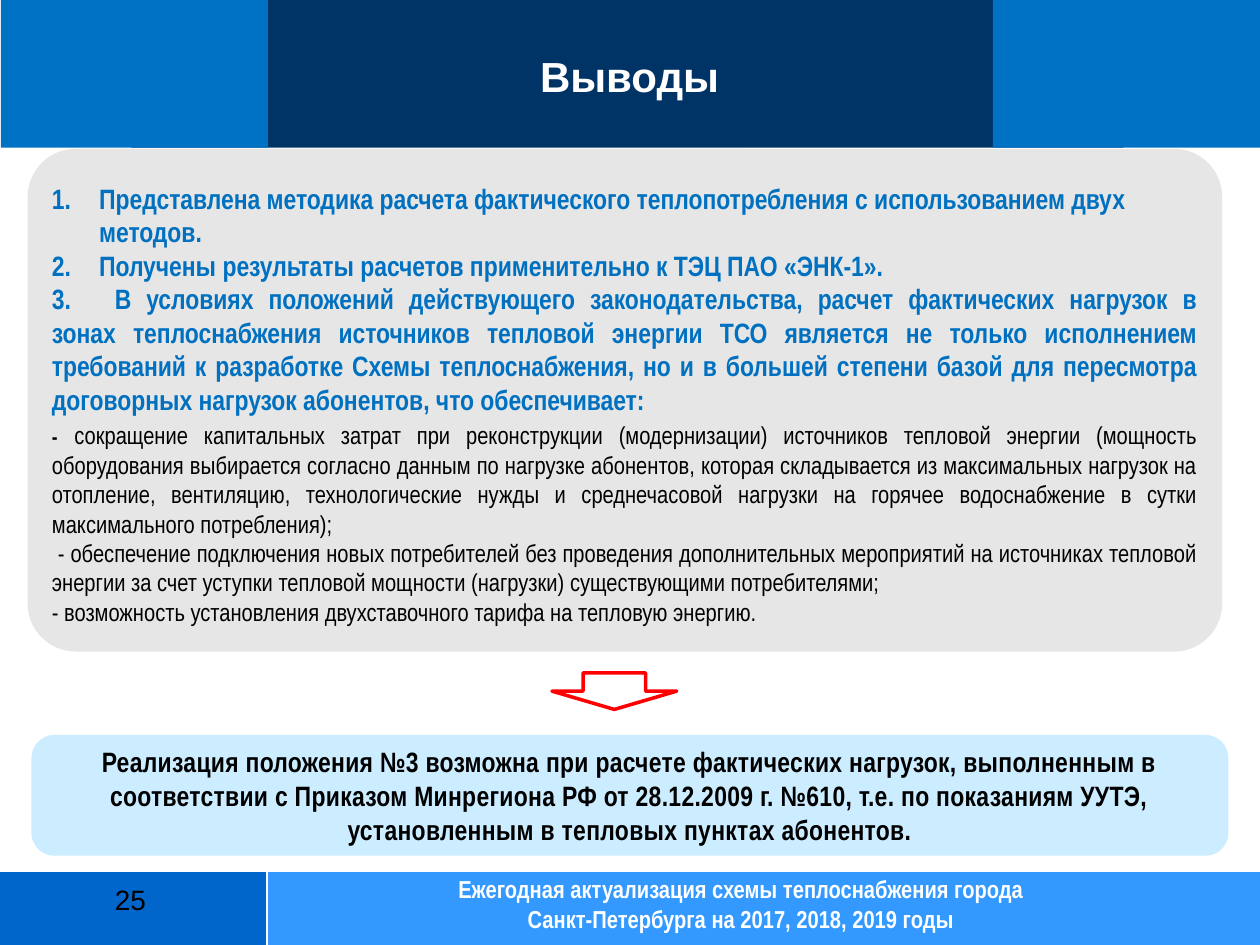
from dataclasses import dataclass
from typing import NamedTuple, Optional

from lxml import etree
from pptx import Presentation
from pptx.dml.color import RGBColor
from pptx.enum import shapes, text
from pptx.oxml import ns
from pptx.util import Pt


@dataclass(frozen=True)
class Theme:
    heading_font: str = "Arial"
    body_font: str = "Arial Narrow"
    title_size: float = 24
    large: float = 16
    medium: float = 14
    small: float = 12
    white: str = "FFFFFF"
    black: str = "000000"
    navy: str = "003366"
    header_blue: str = "0072C5"
    footer_dark: str = "0066CC"
    footer_light: str = "3399FF"
    text_blue: str = "0070C0"
    panel_gray: str = "E6E6E6"
    panel_blue: str = "CCECFF"
    red: str = "FF0000"


THEME = Theme()
ALIGN = text.PP_ALIGN
SHAPE = shapes.MSO_SHAPE


class Box(NamedTuple):
    left: float
    top: float
    width: float
    height: float

    def lengths(self) -> list:
        return [Pt(value) for value in self]


@dataclass
class Panel:
    box: Box
    fill: str
    kind: int = SHAPE.RECTANGLE
    corner: Optional[float] = None
    line: Optional[str] = None


@dataclass
class Item:
    words: str
    size: float = THEME.medium
    color: str = THEME.black
    bold: bool = False
    align: int = ALIGN.JUSTIFY
    font: str = THEME.body_font
    numbered: bool = False
    tab: Optional[float] = None


def draw_panel(slide, panel: Panel):
    shape = slide.shapes.add_shape(panel.kind, *panel.box.lengths())
    shape.shadow.inherit = False
    shape.fill.solid()
    shape.fill.fore_color.rgb = RGBColor.from_string(panel.fill)
    if panel.corner is not None:
        shape.adjustments[0] = panel.corner
    if panel.line:
        shape.line.color.rgb = RGBColor.from_string(panel.line)
        shape.line.width = Pt(2)
    else:
        shape.line.fill.background()
    return shape


def draw_rule(slide, x1: float, y1: float, x2: float, y2: float) -> None:
    line = slide.shapes.add_connector(
        shapes.MSO_CONNECTOR.STRAIGHT, Pt(x1), Pt(y1), Pt(x2), Pt(y2))
    line.line.color.rgb = RGBColor.from_string(THEME.white)
    line.line.width = Pt(1.25)
    etree.SubElement(line._element.spPr, ns.qn("a:effectLst"))


def style_font(font, size: float, color: str, bold: bool, name: str) -> None:
    font.size, font.bold, font.name = Pt(size), bold, name
    font.color.rgb = RGBColor.from_string(color)


def set_frame(frame, anchor: int, side: float, top: float, bottom: float) -> None:
    frame.word_wrap = True
    frame.auto_size = text.MSO_AUTO_SIZE.NONE
    frame.vertical_anchor = anchor
    frame.margin_left = frame.margin_right = Pt(side)
    frame.margin_top, frame.margin_bottom = Pt(top), Pt(bottom)


def write_items(frame, items: list[Item]) -> None:
    for index, item in enumerate(items):
        paragraph = frame.paragraphs[0] if index == 0 else frame.add_paragraph()
        paragraph.alignment = item.align
        paragraph.space_before = Pt(0)
        properties = paragraph._p.get_or_add_pPr()
        hanging = Pt(27) if item.numbered else 0
        properties.set("marL", str(hanging))
        properties.set("indent", str(-hanging))
        if item.numbered:
            etree.SubElement(properties, ns.qn("a:buFont"), typeface="+mj-lt")
            etree.SubElement(properties, ns.qn("a:buAutoNum"), type="arabicPeriod")
        else:
            etree.SubElement(properties, ns.qn("a:buNone"))
        if item.tab:
            tabs = etree.SubElement(properties, ns.qn("a:tabLst"))
            etree.SubElement(tabs, ns.qn("a:tab"), pos=str(Pt(item.tab)), algn="l")
        if item.words:
            paragraph.add_run().text = item.words
        style_font(paragraph.font, item.size, item.color, item.bold, item.font)


def place(slide, placeholder, box: Box) -> None:
    """Move a placeholder to its box, in front of the panels."""
    placeholder.left, placeholder.top, placeholder.width, placeholder.height = box.lengths()
    slide.shapes._spTree.append(placeholder._element)


def add_label(slide, box: Box, items: list[Item]) -> None:
    frame = slide.shapes.add_textbox(*box.lengths()).text_frame
    set_frame(frame, text.MSO_ANCHOR.TOP, 7.2, 3.6, 3.6)
    write_items(frame, items)


WIDTH, HEIGHT = 720, 540
SIDE = 152.6
HEADER = 84.4
FOOTER = 497.5
FOOTER_HEIGHT = HEIGHT - FOOTER
FINDINGS_BOX = Box(15.8, 85, 682.6, 287.3)


def main() -> None:
    presentation = Presentation()
    presentation.slide_width, presentation.slide_height = Pt(WIDTH), Pt(HEIGHT)
    slide = presentation.slides.add_slide(presentation.slide_layouts[1])
    title, body = slide.placeholders

    # Footer and header bands with white dividers
    for panel in (
        Panel(Box(0, FOOTER, SIDE, FOOTER_HEIGHT), THEME.footer_dark),
        Panel(Box(SIDE, FOOTER, WIDTH - SIDE, FOOTER_HEIGHT), THEME.footer_light),
        Panel(Box(75, 0, 567, HEADER), THEME.navy),
        Panel(Box(0.5, 0, SIDE, HEADER), THEME.header_blue),
        Panel(Box(WIDTH - SIDE, 0, SIDE, HEADER), THEME.header_blue),
    ):
        draw_panel(slide, panel)
    draw_rule(slide, SIDE, FOOTER, SIDE, HEIGHT)
    for y in (FOOTER, 85):
        draw_rule(slide, 0, y, WIDTH, y)

    # Title
    place(slide, title, Box(152, 0, 415.5, 79.2))
    set_frame(title.text_frame, text.MSO_ANCHOR.MIDDLE, 7.2, 10.8, 3.6)
    write_items(title.text_frame, [
        Item("Выводы", THEME.title_size, THEME.white, True, ALIGN.CENTER, THEME.heading_font)])

    # Page number and footer text
    add_label(slide, Box(15.8, 501, 117.4, 37.4), [
        Item("25", THEME.large, align=ALIGN.CENTER, font=THEME.heading_font)])
    add_label(slide, Box(243.4, 496, 360, 41), [
        Item(words, THEME.medium, THEME.white, True, ALIGN.CENTER) for words in (
            "Ежегодная актуализация схемы теплоснабжения города",
            "Санкт-Петербурга на 2017, 2018, 2019 годы")])

    # Findings
    draw_panel(slide, Panel(FINDINGS_BOX, THEME.panel_gray, SHAPE.ROUNDED_RECTANGLE, 0.096))
    place(slide, body, FINDINGS_BOX)
    set_frame(body.text_frame, text.MSO_ANCHOR.MIDDLE, 13.9, 14, 10)
    heading = dict(size=THEME.large, color=THEME.text_blue, bold=True)
    numbered = dict(heading, align=ALIGN.LEFT, numbered=True)
    write_items(body.text_frame, [
        Item("Представлена методика расчета фактического теплопотребления с "
             "использованием двух методов.", **numbered),
        Item("Получены результаты расчетов применительно к ТЭЦ ПАО «ЭНК-1».", **numbered),
        Item("3.\tВ условиях положений действующего законодательства, расчет фактических "
             "нагрузок в зонах теплоснабжения источников тепловой энергии ТСО является не "
             "только исполнением требований к разработке Схемы теплоснабжения, но и в большей "
             "степени базой для пересмотра договорных нагрузок абонентов, что обеспечивает:",
             tab=28.5, **heading),
        Item(""),
        Item(" - обеспечение подключения новых потребителей без проведения дополнительных "
             "мероприятий на источниках тепловой энергии за счет уступки тепловой мощности "
             "(нагрузки) существующими потребителями;"),
        Item("- возможность установления двухставочного тарифа на тепловую энергию."),
    ])
    savings = body.text_frame.paragraphs[3]
    for words, size, bold in (
        ("-", THEME.small, True),
        (" ", THEME.large, True),
        ("сокращение капитальных затрат при реконструкции (модернизации) источников тепловой "
         "энергии (мощность оборудования выбирается согласно данным по нагрузке абонентов, "
         "которая складывается из максимальных нагрузок на отопление, вентиляцию, "
         "технологические нужды и среднечасовой нагрузки на горячее водоснабжение в сутки "
         "максимального потребления);", THEME.medium, False),
    ):
        run = savings.add_run()
        run.text = words
        style_font(run.font, size, THEME.black, bold, THEME.body_font)

    # Conclusion
    conclusion = draw_panel(slide, Panel(
        Box(18, 420, 684, 69), THEME.panel_blue, SHAPE.ROUNDED_RECTANGLE, 0.191))
    set_frame(conclusion.text_frame, text.MSO_ANCHOR.MIDDLE, 5.8, 5.8, 5.8)
    write_items(conclusion.text_frame, [
        Item("Реализация положения №3 возможна при расчете фактических нагрузок, выполненным в "
             "соответствии с Приказом Минрегиона РФ от 28.12.2009 г. №610, т.е. по показаниям "
             "УУТЭ, установленным в тепловых пунктах абонентов.",
             THEME.large, bold=True, align=ALIGN.CENTER)])
    conclusion.text_frame.paragraphs[0].runs[0].font._element.set("spc", "20")

    # Arrow from findings to conclusion
    draw_panel(slide, Panel(
        Box(315.4, 384.5, 71.3, 20.9), THEME.white, SHAPE.DOWN_ARROW, line=THEME.red))

    presentation.save("out.pptx")


if __name__ == "__main__":
    main()
